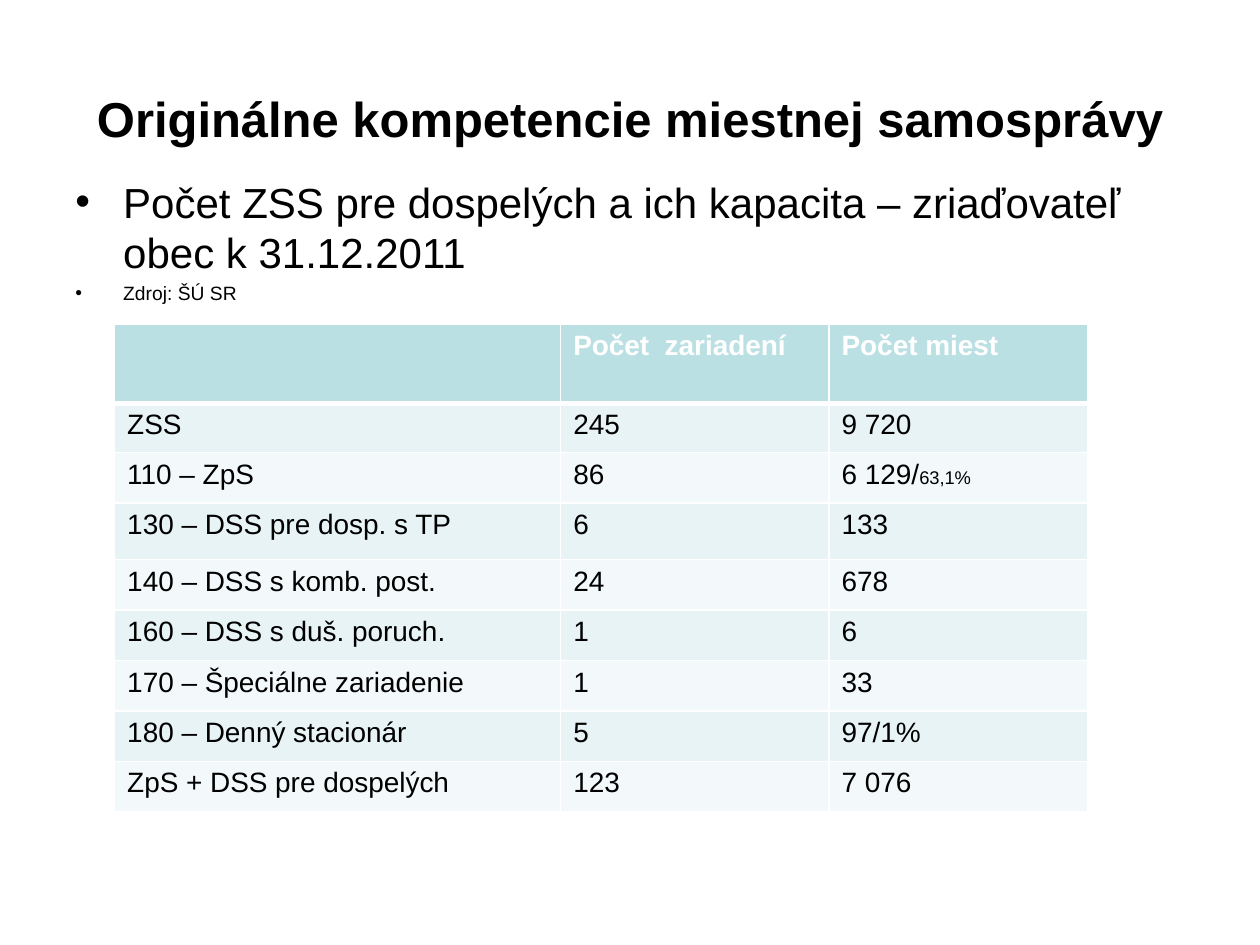
from dataclasses import dataclass

from lxml import etree
from pptx import Presentation
from pptx.dml.color import RGBColor
from pptx.enum.text import MSO_ANCHOR, PP_ALIGN
from pptx.oxml.ns import qn
from pptx.util import Inches, Pt

MIDDLE, TOP = MSO_ANCHOR.MIDDLE, MSO_ANCHOR.TOP
CENTER = PP_ALIGN.CENTER
BLANK_LAYOUT = 6
WIDTH, HEIGHT = 10, 7.5


@dataclass(frozen=True)
class Theme:
    font: str = "Arial"
    ink: str = "000000"
    paper: str = "FFFFFF"
    header: str = "BBE0E3"
    bands: tuple = ("E7F3F4", "F3F9FA")
    title_size: float = 28
    body_size: float = 24
    source_size: float = 11
    table_size: float = 16
    share_size: float = 10.5
    indent: float = 0.38
    rule: float = 1
    header_rule: float = 3


THEME = Theme()

BULLETS = (
    ("Počet ZSS pre dospelých a ich kapacita – zriaďovateľ obec k 31.12.2011", THEME.body_size),
    ("Zdroj: ŠÚ SR", THEME.source_size),
)
COLUMN_WIDTHS = (3.54, 2.13, 2.05)
ROW_HEIGHTS = (0.63, 0.39, 0.4, 0.45) + (0.4,) * 5
TABLE_ROWS = (
    ("", "Počet  zariadení", "Počet miest"),
    ("ZSS", "245", "9 720"),
    ("110 – ZpS", "86", ("6 129/", "63,1%")),
    ("130 – DSS pre dosp. s TP", "6", "133"),
    ("140 – DSS s komb. post.", "24", "678"),
    ("160 – DSS s duš. poruch.", "1", "6"),
    ("170 – Špeciálne zariadenie", "1", "33"),
    ("180 – Denný stacionár", "5", "97/1%"),
    ("ZpS + DSS pre dospelých", "123", "7 076"),
)


def add_span(para, text, size, color=THEME.ink, bold=False):
    span = para.add_run()
    span.text = text
    span.font.name = THEME.font
    span.font.size = Pt(size)
    span.font.bold = bold
    span.font.color.rgb = RGBColor.from_string(color)


def add_box(page, left, top, width, height, anchor):
    box = page.shapes.add_textbox(
        Inches(left * WIDTH), Inches(top * HEIGHT), Inches(width * WIDTH), Inches(height * HEIGHT)
    )
    box.text_frame.word_wrap = True
    box.text_frame.vertical_anchor = anchor
    return box.text_frame


def add_title(page, text):
    para = add_box(page, 0.05, 0.04, 0.9, 0.17, MIDDLE).paragraphs[0]
    para.alignment = CENTER
    add_span(para, text, THEME.title_size, bold=True)


def set_bullet(para):
    properties = para._p.get_or_add_pPr()
    properties.set("marL", str(Inches(THEME.indent)))
    properties.set("indent", str(-Inches(THEME.indent)))
    etree.SubElement(properties, qn("a:buFont"), typeface=THEME.font)
    etree.SubElement(properties, qn("a:buChar"), char="•")


def add_bullets(page, items):
    frame = add_box(page, 0.05, 0.18, 0.9, 0.71, TOP)
    for index, (text, size) in enumerate(items):
        para = frame.add_paragraph() if index else frame.paragraphs[0]
        set_bullet(para)
        if index:
            para.space_before = Pt(0.2 * size)
        add_span(para, text, size)


def set_borders(cell, top, bottom):
    properties = cell._tc.get_or_add_tcPr()
    edges = (("a:lnL", THEME.rule), ("a:lnR", THEME.rule), ("a:lnT", top), ("a:lnB", bottom))
    for position, (tag, weight) in enumerate(edges):
        line = etree.Element(qn(tag), w=str(Pt(weight)))
        fill = etree.SubElement(line, qn("a:solidFill"))
        etree.SubElement(fill, qn("a:srgbClr"), val=THEME.paper)
        properties.insert(position, line)


def fill_cell(cell, content, row):
    is_header = row == 0
    color = THEME.header if is_header else THEME.bands[(row - 1) % 2]
    cell.fill.solid()
    cell.fill.fore_color.rgb = RGBColor.from_string(color)
    top = THEME.header_rule if row == 1 else THEME.rule
    set_borders(cell, top, THEME.header_rule if is_header else THEME.rule)
    parts = (content,) if isinstance(content, str) else content
    ink = THEME.paper if is_header else THEME.ink
    for text, size in zip(parts, (THEME.table_size, THEME.share_size)):
        if text:
            add_span(cell.text_frame.paragraphs[0], text, size, ink, is_header)


def add_facility_table(page, rows):
    table = page.shapes.add_table(
        len(rows), len(COLUMN_WIDTHS), Inches(0.091 * WIDTH), Inches(0.343 * HEIGHT),
        Inches(sum(COLUMN_WIDTHS)), Inches(sum(ROW_HEIGHTS)),
    ).table
    for column, width in zip(table.columns, COLUMN_WIDTHS):
        column.width = Inches(width)
    for index, (contents, height) in enumerate(zip(rows, ROW_HEIGHTS)):
        table.rows[index].height = Inches(height)
        for column, content in enumerate(contents):
            fill_cell(table.cell(index, column), content, index)


def main():
    deck = Presentation()
    deck.slide_width, deck.slide_height = Inches(WIDTH), Inches(HEIGHT)
    page = deck.slides.add_slide(deck.slide_layouts[BLANK_LAYOUT])
    add_title(page, "Originálne kompetencie miestnej samosprávy")
    add_bullets(page, BULLETS)
    add_facility_table(page, TABLE_ROWS)
    deck.save("out.pptx")


if __name__ == "__main__":
    main()
